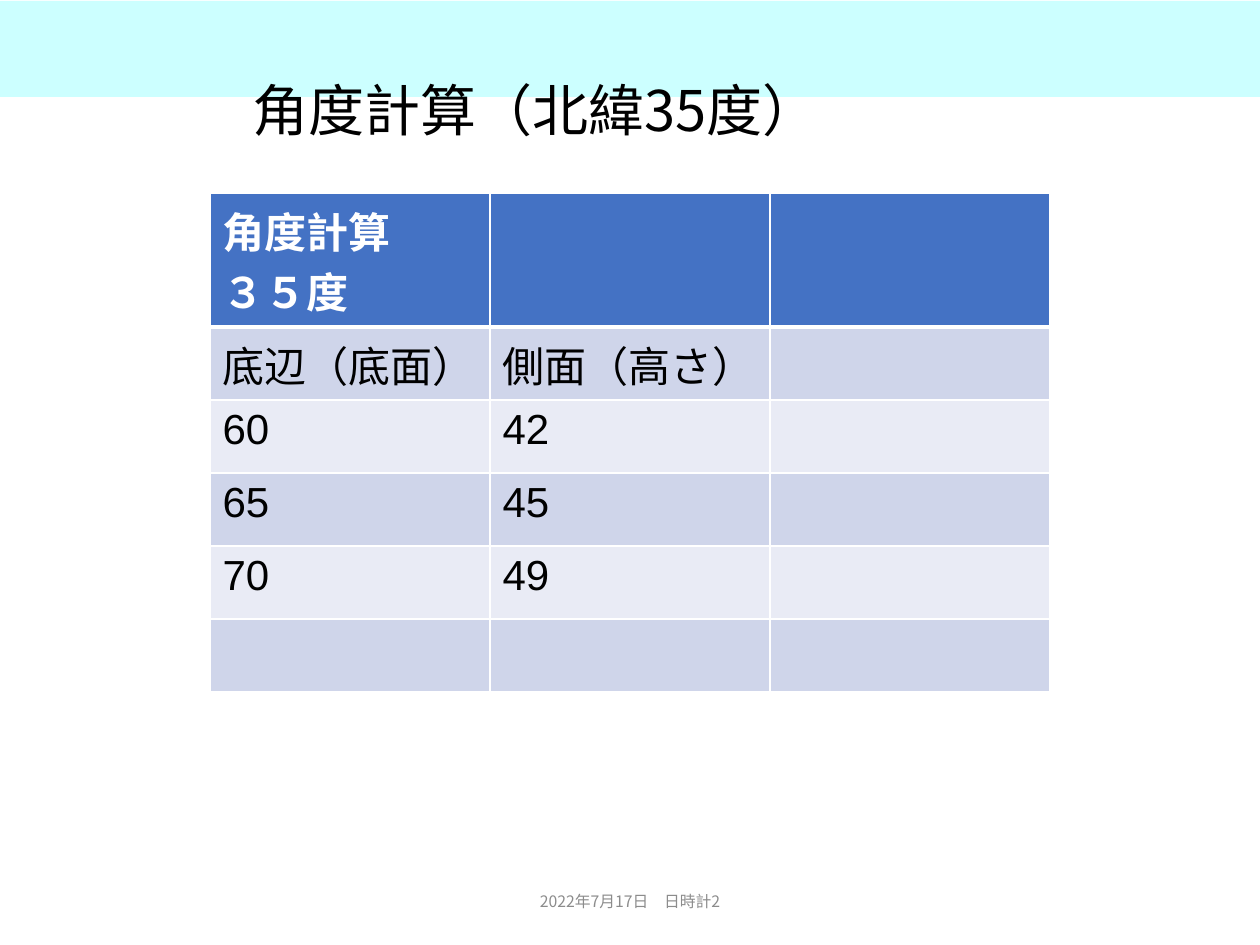
from pptx import Presentation
from pptx.dml.color import RGBColor
from pptx.enum.shapes import MSO_SHAPE
from pptx.enum.text import MSO_ANCHOR, PP_ALIGN
from pptx.oxml.ns import qn
from pptx.util import Emu, Pt
from lxml.etree import SubElement

SCALE = 914400 // 126  # EMU per px
CJK = "Noto Sans CJK JP"
COLORS = {
    "band": "CCFFFF", "black": "000000", "white": "FFFFFF", "footer": "8C8C8C",
    "header": "4472C4", "dark_row": "CFD5EA", "light_row": "E9EBF5",
}
ROWS = [
    ["角度計算　　３５度　", "", ""],
    ["底辺（底面）", "側面（高さ）", ""],
    ["60", "42", ""],
    ["65", "45", ""],
    ["70", "49", ""],
    ["", "", ""],
]


def px(*values):
    return [Emu(v * SCALE) for v in values]


def rgb(name):
    return RGBColor.from_string(COLORS[name])


def add_run(p, text, size, color, font=CJK, bold=False):
    r = p.add_run()
    r.text = text
    r.font.size, r.font.name, r.font.bold = Pt(size), font, bold
    r.font.color.rgb = rgb(color)
    SubElement(r.font._element, qn("a:ea")).set("typeface", CJK)


def add_band(s, box):
    sp = s.shapes.add_shape(MSO_SHAPE.RECTANGLE, *px(*box))
    sp.shadow.inherit = False
    sp.fill.solid()
    sp.fill.fore_color.rgb = rgb("band")
    sp.line.fill.background()


def add_text(s, box, text, size, color, anchor, spacing=1.0):
    tf = s.shapes.add_textbox(*px(*box)).text_frame
    tf.word_wrap = True
    tf.vertical_anchor = anchor
    p = tf.paragraphs[0]
    p.alignment = PP_ALIGN.CENTER
    p.line_spacing = spacing
    add_run(p, text, size, color)


def style_cell(cell, fill, bottom):
    # Borders come before the fill in the cell properties
    tcPr = cell._tc.get_or_add_tcPr()
    for side, width in (("L", 1), ("R", 1), ("T", 1), ("B", bottom)):
        ln = SubElement(tcPr, qn(f"a:ln{side}"), w=str(Pt(width)))
        solid = SubElement(ln, qn("a:solidFill"))
        SubElement(solid, qn("a:srgbClr"), val=COLORS["white"])
    cell.fill.solid()
    cell.fill.fore_color.rgb = rgb(fill)


def add_angle_table(s, box, header_height, row_height):
    table = s.shapes.add_table(len(ROWS), len(ROWS[0]), *px(*box)).table
    for i, values in enumerate(ROWS):
        header = i == 0
        table.rows[i].height = px(header_height if header else row_height)[0]
        fill = "header" if header else "dark_row" if i % 2 else "light_row"
        for j, text in enumerate(values):
            cell = table.cell(i, j)
            style_cell(cell, fill, bottom=3 if header else 1)
            p = cell.text_frame.paragraphs[0]
            if text:
                add_run(p, text, 24, "white" if header else "black", "Arial", header)
            else:
                p.font.size = Pt(24)


def main():
    prs = Presentation()
    prs.slide_width, prs.slide_height = px(1260, 945)
    s = prs.slides.add_slide(prs.slide_layouts[6])

    # Top band and title
    add_band(s, (0, 1, 1260, 96))
    add_text(s, (0, 50, 1071, 100), "角度計算（北緯35度）", 32, "black",
             MSO_ANCHOR.BOTTOM, 0.9)
    # Footer
    add_text(s, (417, 876, 426, 50), "2022年7月17日　日時計2", 9, "footer",
             MSO_ANCHOR.MIDDLE)
    # Angle table
    add_angle_table(s, (210, 193, 840, 499), 134, 73)

    prs.save("out.pptx")


if __name__ == "__main__":
    main()
